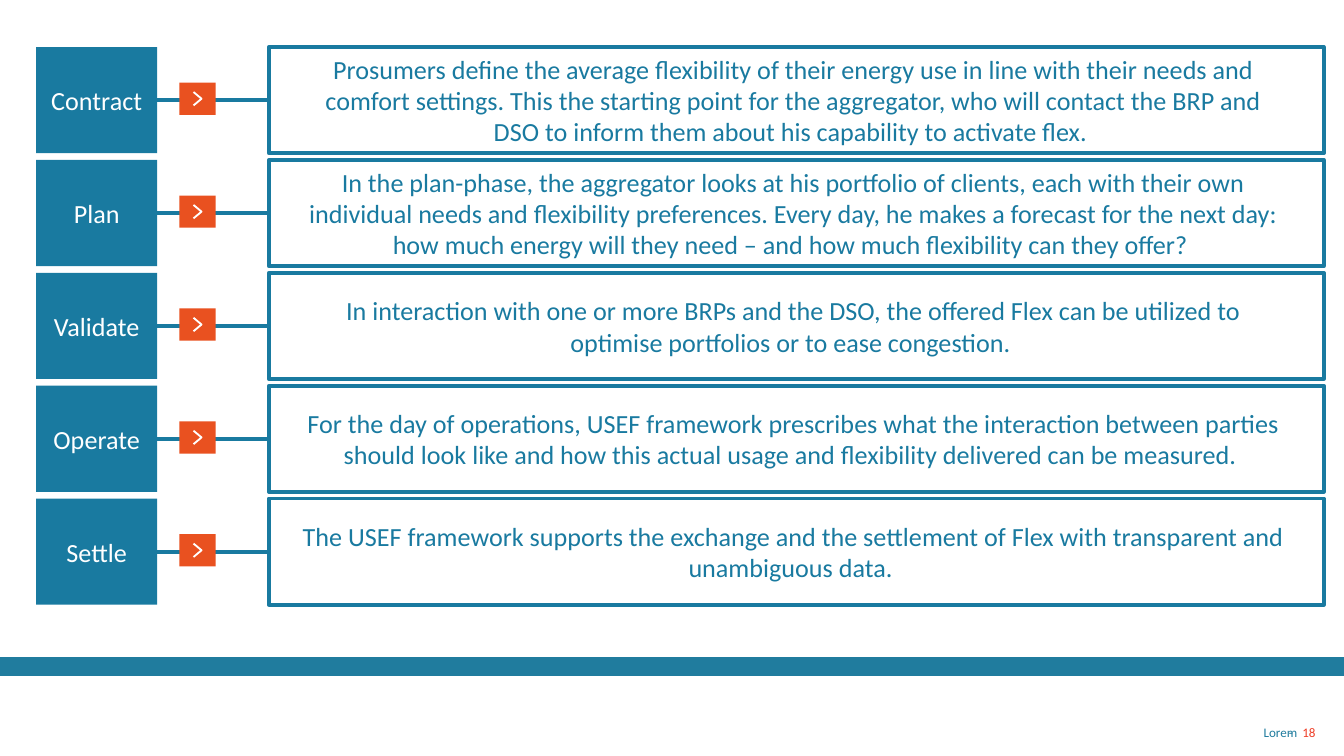
from lxml import etree
from pptx import Presentation
from pptx.dml.color import RGBColor
from pptx.enum.shapes import MSO_CONNECTOR, MSO_SHAPE
from pptx.enum.text import MSO_ANCHOR, PP_ALIGN
from pptx.oxml.ns import qn
from pptx.util import Inches, Pt

RECTANGLE = MSO_SHAPE.RECTANGLE
STRAIGHT = MSO_CONNECTOR.STRAIGHT
MIDDLE, BOTTOM = MSO_ANCHOR.MIDDLE, MSO_ANCHOR.BOTTOM
LEFT, CENTER, RIGHT = PP_ALIGN.LEFT, PP_ALIGN.CENTER, PP_ALIGN.RIGHT
RIGHT_SIDE, LEFT_SIDE = 3, 1

FONT = "Calibri"
COLORS = {
    "blue": "197AA0",
    "footer": "207C9E",
    "orange": "E95120",
    "number": "EE3E27",
    "white": "FFFFFF",
}

PAGE_WIDTH = 10
PAGE_HEIGHT = PAGE_WIDTH * 9 / 16
ROW_LEFT, ROW_TOP, ROW_WIDTH, ROW_HEIGHT = 0.27, 0.35, 9.58, 0.79
ROW_PITCH = 0.84
PHASES = [
    ("Contract",
     "Prosumers define the average flexibility of their energy use in line with "
     "their needs and comfort settings. This the starting point for the aggregator, "
     "who will contact the BRP and DSO to inform them about his capability to "
     "activate flex. "),
    ("Plan",
     "In the plan-phase, the aggregator looks at his portfolio of clients, each with "
     "their own individual needs and flexibility preferences. Every day, he makes a "
     "forecast for the next day: how much energy will they need – and how much "
     "flexibility can they offer? "),
    ("Validate",
     "In interaction with one or more BRPs and the DSO, the offered Flex can be "
     "utilized to optimise portfolios or to ease congestion. "),
    ("Operate",
     "For the day of operations, USEF framework prescribes what the interaction "
     "between parties should look like and how this actual usage and flexibility "
     "delivered can be measured. "),
    ("Settle",
     "The USEF framework supports the exchange and the settlement of Flex with "
     "transparent and unambiguous data. "),
]


def color(name):
    return RGBColor.from_string(COLORS[name])


def style_line(line, name, width):
    line.color.rgb = color(name)
    line.width = Pt(width)


def add_block(page, left, top, width, height, fill, outline=None):
    block = page.shapes.add_shape(
        RECTANGLE, Inches(left), Inches(top), Inches(width), Inches(height))
    block.shadow.inherit = False
    block.fill.solid()
    block.fill.fore_color.rgb = color(fill)
    if outline:
        style_line(block.line, outline, 2)
    else:
        block.line.fill.background()
    return block


def add_span(para, text, size, name):
    span = para.add_run()
    span.text = text
    span.font.name = FONT
    span.font.size = Pt(size)
    span.font.color.rgb = color(name)


def prepare_text(box, anchor, align, inset_left, inset_right):
    frame = box.text_frame
    frame.word_wrap = True
    frame.vertical_anchor = anchor
    frame.margin_left, frame.margin_right = Inches(inset_left), Inches(inset_right)
    frame.margin_top = frame.margin_bottom = Inches(0.05)
    para = frame.paragraphs[0]
    para.alignment = align
    return para


def add_marker(page, center_x, center_y):
    """Orange tile with a white chevron, centred on the given point."""
    width, height = 0.27, 0.24
    add_block(page, center_x - width / 2, center_y - height / 2,
              width, height, "orange")
    reach, rise = 0.03, 0.05
    points = [(Inches(center_x + dx), Inches(center_y + dy))
              for dx, dy in ((-reach, -rise), (reach, 0), (-reach, rise))]
    builder = page.shapes.build_freeform(*points[0], scale=1.0)
    builder.add_line_segments(points[1:], close=False)
    chevron = builder.convert_to_shape()
    chevron.shadow.inherit = False
    chevron.fill.background()
    style_line(chevron.line, "white", 1)


def add_phase(page, left, top, width, height, name, description):
    """One row: phase label, connector with marker, description."""
    label_width, text_offset = 0.9, 1.73
    label = add_block(page, left, top, label_width, height, "blue")
    add_span(prepare_text(label, MIDDLE, CENTER, 0, 0), name, 14, "white")

    box = add_block(page, left + text_offset, top, width - text_offset, height,
                    "white", "blue")
    add_span(prepare_text(box, MIDDLE, CENTER, 0.24, 0.28), description, 14, "blue")

    link = page.shapes.add_connector(STRAIGHT, 0, 0, 0, 0)
    link.begin_connect(label, RIGHT_SIDE)
    link.end_connect(box, LEFT_SIDE)
    style_line(link.line, "blue", 2)
    etree.SubElement(link.element.spPr, qn("a:effectLst"))

    add_marker(page, left + 1.2, top + height / 2 - 0.01)


def add_footer(page, left, top, width):
    """Blue band with the footer text and page number below it."""
    add_block(page, left, top, width, 0.14, "footer")
    text_top, text_height = Inches(top + 0.27), Inches(0.4)

    number = page.shapes.add_textbox(
        Inches(left + 8.59), text_top, Inches(1.3), text_height)
    para = prepare_text(number, BOTTOM, LEFT, 1, 0)
    tabs = etree.SubElement(para._p.get_or_add_pPr(), qn("a:tabLst"))
    etree.SubElement(tabs, qn("a:tab"), pos=str(Inches(0.1)), algn="l")
    para.line_spacing = 0.93
    add_span(para, "-\t", 7, "footer")
    add_span(para, "18", 7, "number")

    footer = page.shapes.add_textbox(
        Inches(left + 5.49), text_top, Inches(4.26), text_height)
    add_span(prepare_text(footer, BOTTOM, RIGHT, 0.1, 0.1), "Lorem", 7, "footer")


def main():
    deck = Presentation()
    deck.slide_width, deck.slide_height = Inches(PAGE_WIDTH), Inches(PAGE_HEIGHT)
    page = deck.slides.add_slide(deck.slide_layouts[6])
    add_footer(page, 0, 4.89, PAGE_WIDTH)
    for index, (name, description) in enumerate(PHASES):
        add_phase(page, ROW_LEFT, ROW_TOP + index * ROW_PITCH,
                  ROW_WIDTH, ROW_HEIGHT, name, description)
    deck.save("out.pptx")


if __name__ == "__main__":
    main()
